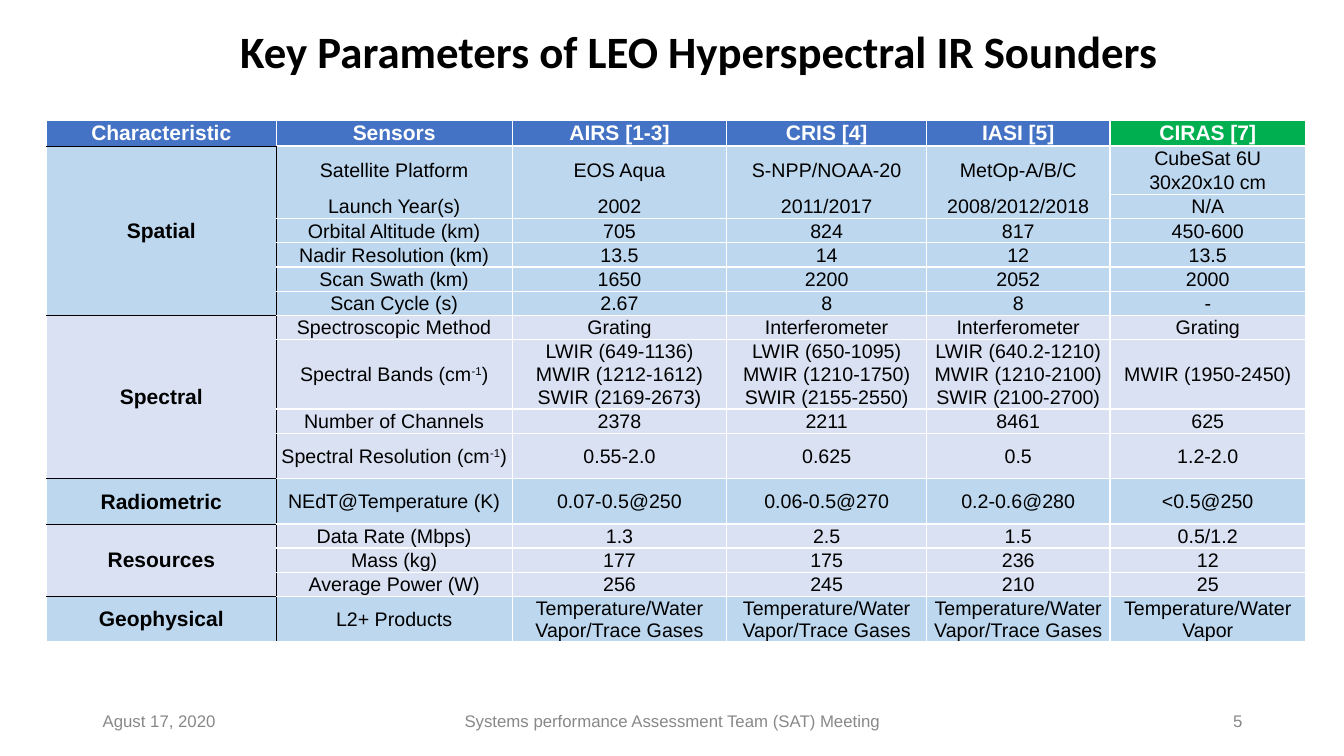
from dataclasses import dataclass

from lxml.etree import SubElement
from pptx import Presentation
from pptx.dml.color import RGBColor
from pptx.enum.text import MSO_ANCHOR, MSO_AUTO_SIZE, PP_ALIGN
from pptx.oxml.ns import qn
from pptx.table import Table, _Cell
from pptx.text.text import _Paragraph
from pptx.util import Inches, Pt

BLACK = RGBColor(0x00, 0x00, 0x00)
WHITE = RGBColor(0xFF, 0xFF, 0xFF)
GREY = RGBColor(0x88, 0x88, 0x88)
BLUE = RGBColor(0x44, 0x72, 0xC4)
GREEN = RGBColor(0x00, 0xB0, 0x50)
PALE_BLUE = RGBColor(0xBD, 0xD7, 0xEE)
LAVENDER = RGBColor(0xD9, 0xE1, 0xF2)


@dataclass
class Edge:
    color: RGBColor
    width: float


@dataclass
class Parameter:
    label: str  # "^-1" marks a superscript
    values: list[str]  # a value with several lines takes one table row per line
    row_height: float = 0.24

    @property
    def row_count(self) -> int:
        return max(len(v.split("\n")) for v in self.values)


@dataclass
class Group:
    name: str
    parameters: list[Parameter]


@dataclass
class Footer:
    text: str
    left: float
    width: float
    align: PP_ALIGN


THIN = Edge(WHITE, 1)
THICK = Edge(WHITE, 1.5)
DARK = Edge(BLACK, 0.5)

COLUMN_WIDTHS = [2.28, 2.34, 2.13, 1.98, 1.82, 1.94]
HEADER_HEIGHT = 0.26
HEADERS = ["Characteristic", "Sensors", "AIRS [1-3]", "CRIS [4]", "IASI [5]", "CIRAS [7]"]
GAS_PRODUCTS = "Temperature/Water Vapor/Trace Gases"
GROUPS = [
    Group("Spatial", [
        Parameter("Satellite Platform",
                  ["EOS Aqua", "S-NPP/NOAA-20", "MetOp-A/B/C", "CubeSat 6U\n30x20x10 cm"]),
        Parameter("Launch Year(s)", ["2002", "2011/2017", "2008/2012/2018", "N/A"]),
        Parameter("Orbital Altitude (km)", ["705", "824", "817", "450-600"]),
        Parameter("Nadir Resolution (km)", ["13.5", "14", "12", "13.5"]),
        Parameter("Scan Swath (km)", ["1650", "2200", "2052", "2000"]),
        Parameter("Scan Cycle (s)", ["2.67", "8", "8", "-"]),
    ]),
    Group("Spectral", [
        Parameter("Spectroscopic Method",
                  ["Grating", "Interferometer", "Interferometer", "Grating"]),
        Parameter("Spectral Bands (cm^-1)", [
            "LWIR (649-1136)\nMWIR (1212-1612)\nSWIR (2169-2673)",
            "LWIR (650-1095)\nMWIR (1210-1750)\nSWIR (2155-2550)",
            "LWIR (640.2-1210)\nMWIR (1210-2100)\nSWIR (2100-2700)",
            "MWIR (1950-2450)"], 0.23),
        Parameter("Number of Channels", ["2378", "2211", "8461", "625"]),
        Parameter("Spectral Resolution (cm^-1)", ["0.55-2.0", "0.625", "0.5", "1.2-2.0"], 0.45),
    ]),
    Group("Radiometric", [
        Parameter("NEdT@Temperature (K)",
                  ["0.07-0.5@250", "0.06-0.5@270", "0.2-0.6@280", "<0.5@250"], 0.45),
    ]),
    Group("Resources", [
        Parameter("Data Rate (Mbps)", ["1.3", "2.5", "1.5", "0.5/1.2"]),
        Parameter("Mass (kg)", ["177", "175", "236", "12"]),
        Parameter("Average Power (W)", ["256", "245", "210", "25"]),
    ]),
    Group("Geophysical", [
        Parameter("L2+ Products", [GAS_PRODUCTS] * 3 + ["Temperature/Water Vapor"], 0.45),
    ]),
]
FOOTERS = [
    Footer("Agust 17, 2020", 0.92, 3, PP_ALIGN.LEFT),
    Footer("Systems performance Assessment Team (SAT) Meeting", 4.42, 4.5, PP_ALIGN.CENTER),
    Footer("5", 9.42, 3, PP_ALIGN.RIGHT),
]


def style_runs(p: _Paragraph, size: float, color: RGBColor, bold: bool = False,
               font: str = "Arial") -> None:
    for r in p.runs:
        r.font.name, r.font.size, r.font.bold = font, Pt(size), bold
        r.font.color.rgb = color


def set_edges(cell: _Cell, left: Edge, right: Edge, top: Edge | None, bottom: Edge | None) -> None:
    tc_pr = cell._tc.get_or_add_tcPr()
    for tag, edge in zip(("a:lnL", "a:lnR", "a:lnT", "a:lnB"), (left, right, top, bottom)):
        ln = SubElement(tc_pr, qn(tag))
        if edge is None:
            SubElement(ln, qn("a:noFill"))
            continue
        ln.set("w", str(Pt(edge.width)))
        fill = SubElement(ln, qn("a:solidFill"))
        SubElement(fill, qn("a:srgbClr")).set("val", str(edge.color))


def fill_cell(cell: _Cell, text: str, fill: RGBColor, color: RGBColor = BLACK,
              heading: bool = False) -> None:
    cell.fill.solid()
    cell.fill.fore_color.rgb = fill
    cell.vertical_anchor = MSO_ANCHOR.MIDDLE
    cell.margin_left = cell.margin_right = cell.margin_top = Inches(0.01)
    cell.margin_bottom = 0
    p = cell.text_frame.paragraphs[0]
    p.alignment = PP_ALIGN.CENTER
    before, power, after = text.partition("^-1")
    p.text = before
    if power:
        r = p.add_run()
        r.text = power[1:]
        r._r.get_or_add_rPr().set("baseline", "30000")
        p.add_run().text = after
    style_runs(p, 15 if heading else 14, color, heading)


def add_block(table: Table, row: int, col: int, row_count: int, text: str, fill: RGBColor,
              top: Edge, bottom: Edge) -> None:
    """Fill one column of a block: merged for one line, else one line per row."""
    lines = text.split("\n")
    last = row + row_count - 1
    for i in range(row, last + 1):
        set_edges(table.cell(i, col), DARK if col == 1 else THIN, DARK if col == 0 else THIN,
                  top if i == row else None, bottom if i == last else None)
    if len(lines) == 1 and row_count > 1:
        table.cell(row, col).merge(table.cell(last, col))
    for i, line in enumerate(lines):
        fill_cell(table.cell(row + i, col), line, fill, heading=col == 0)


def main() -> None:
    prs = Presentation()
    prs.slide_width, prs.slide_height = Inches(13.33), Inches(7.5)
    s = prs.slides.add_slide(prs.slide_layouts[5])

    # Title
    sp = s.shapes.title
    sp.left, sp.top, sp.width, sp.height = Inches(1.45), Inches(0.27), Inches(10.97), Inches(0.54)
    tf = sp.text_frame
    tf.text = "Key Parameters of LEO Hyperspectral IR Sounders"
    tf.auto_size, tf.vertical_anchor = MSO_AUTO_SIZE.NONE, MSO_ANCHOR.MIDDLE
    p = tf.paragraphs[0]
    p.alignment, p.line_spacing = PP_ALIGN.CENTER, 0.9
    style_runs(p, 32, BLACK, True, "Calibri")

    # Table grid
    heights = [HEADER_HEIGHT] + [q.row_height for g in GROUPS for q in g.parameters
                                 for _ in range(q.row_count)]
    table = s.shapes.add_table(len(heights), len(COLUMN_WIDTHS), Inches(0.46), Inches(1.19),
                               Inches(sum(COLUMN_WIDTHS)), Inches(sum(heights))).table
    table.horz_banding = False
    for column, width in zip(table.columns, COLUMN_WIDTHS):
        column.width = Inches(width)
    for table_row, height in zip(table.rows, heights):
        table_row.height = Inches(height)

    # Header row
    for col, text in enumerate(HEADERS):
        cell = table.cell(0, col)
        set_edges(cell, THIN, THIN, THIN, DARK if col == 0 else THICK)
        fill_cell(cell, text, GREEN if text.startswith("CIRAS") else BLUE, WHITE, True)

    # Groups of parameters
    row = 1
    for n, group in enumerate(GROUPS):
        fill = LAVENDER if n % 2 else PALE_BLUE
        add_block(table, row, 0, sum(q.row_count for q in group.parameters), group.name, fill,
                  DARK, THIN if group is GROUPS[-1] else DARK)
        for q in group.parameters:
            for col, text in enumerate([q.label, *q.values], 1):
                add_block(table, row, col, q.row_count, text, fill,
                          THICK if row == 1 else THIN, THIN)
            row += q.row_count

    # Footer
    for footer in FOOTERS:
        tf = s.shapes.add_textbox(Inches(footer.left), Inches(6.95), Inches(footer.width),
                                  Inches(0.4)).text_frame
        tf.word_wrap, tf.vertical_anchor = True, MSO_ANCHOR.MIDDLE
        tf.text = footer.text
        tf.paragraphs[0].alignment = footer.align
        style_runs(tf.paragraphs[0], 12, GREY)

    prs.save("out.pptx")


if __name__ == "__main__":
    main()
